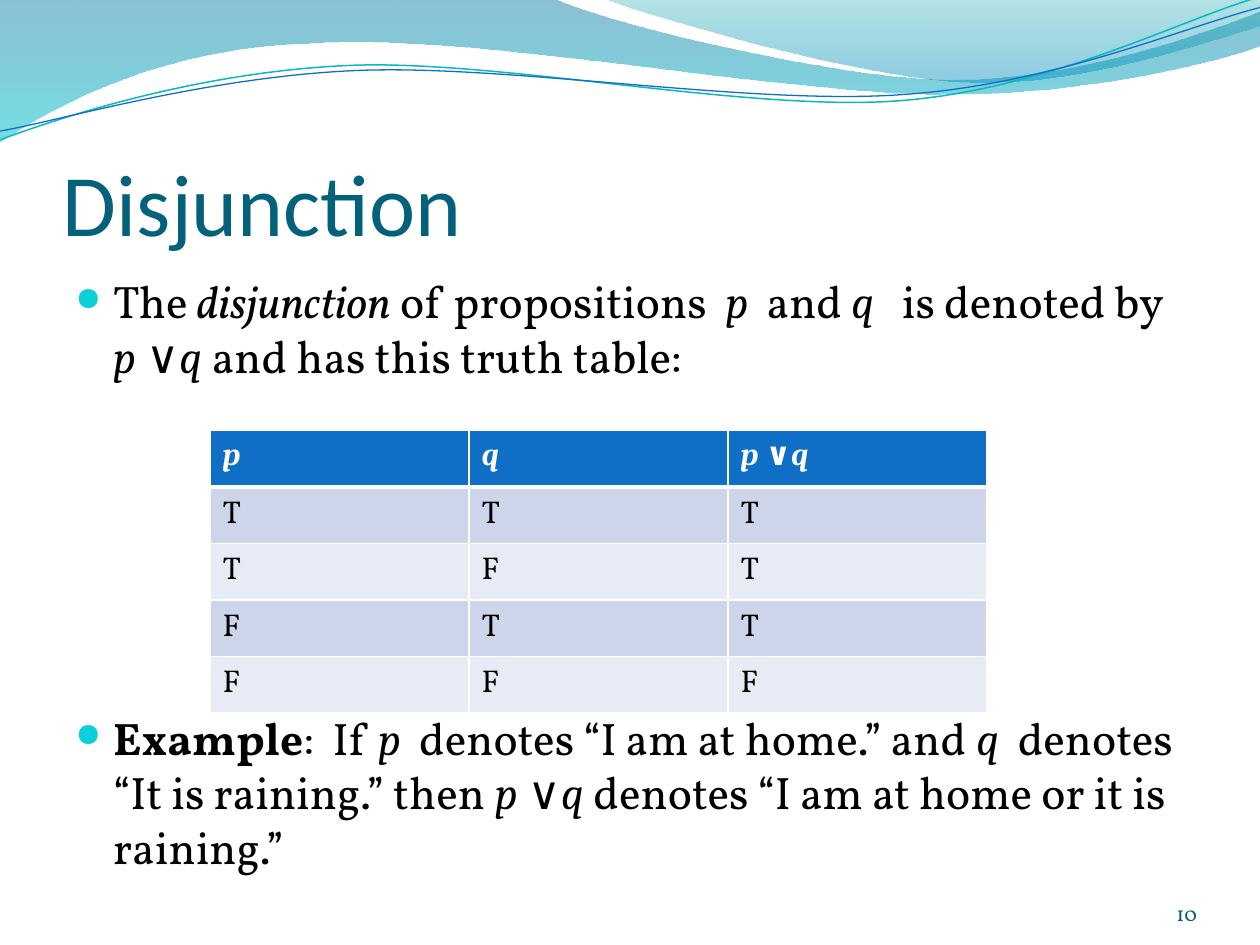
import math
import pptx
import pptx.dml.color
import pptx.enum.text
import pptx.oxml
import pptx.oxml.ns
import pptx.util

Pt = pptx.util.Pt
Enum = pptx.enum.text
qn = pptx.oxml.ns.qn
NS = 'xmlns:a="http://schemas.openxmlformats.org/drawingml/2006/main"'
HEX = {
    "deep": "0074A1", "aqua": "00C6CF", "teal": "00A1A9", "sea": "008BBF",
    "line": "0AB8BF", "blue": "0F6FC6", "title": "04617B", "page": "045D75",
    "dot": "0BD0D9", "band": "CCD5EA", "pale": "E7EBF5",
    "black": "000000", "white": "FFFFFF",
}
RGB = {name: pptx.dml.color.RGBColor.from_string(code) for name, code in HEX.items()}

deck = pptx.Presentation()
deck.slide_width, deck.slide_height = Pt(720), Pt(540)
slide = deck.slides.add_slide(deck.slide_layouts[6])
shapes = slide.shapes


def trace(start, parts, closed):
    """Draw an outline; a part of one point is a line, of three a Bezier curve."""
    ends = [start] + [part[-1] for part in parts]
    left, top = (Pt(min(values)) for values in zip(*ends))
    pen = shapes.build_freeform(Pt(start[0]), Pt(start[1]))
    pen.add_line_segments([(Pt(x), Pt(y)) for x, y in ends[1:]], close=closed)
    shape = pen.convert_to_shape()
    shape.shadow.inherit = False
    for node, part in zip(list(shape.element.iter(qn("a:lnTo"))), parts):
        if len(part) == 3:
            dots = "".join(f'<a:pt x="{Pt(x) - left}" y="{Pt(y) - top}"/>' for x, y in part)
            bend = pptx.oxml.parse_xml(f"<a:cubicBezTo {NS}>{dots}</a:cubicBezTo>")
            node.getparent().replace(node, bend)
    return shape


def write(para, runs, size, color, bold=False):
    """Add (text, style) runs: b bold, i italic, c Cambria, t Calibri."""
    for text, style in runs:
        run = para.add_run()
        run.text = text
        font = run.font
        font.size, font.color.rgb = Pt(size), RGB[color]
        font.name = "Cambria" if "c" in style else "Calibri" if "t" in style else "Vollkorn"
        font.bold, font.italic = bold or "b" in style, "i" in style


# Waves along the top
waves = [
    ((0, 0), [[(316.8, -0.7)],
              [(342.7, 12.2), (478.1, 45.4), (545.8, 45.4)],
              [(614.2, 45.4), (689.8, 18.7), (720, 6.5)],
              [(720.7, 25.9)],
              [(707.8, 31.7), (626.4, 54.7), (537.1, 54)],
              [(447.8, 54), (275, 20.2), (185, 24.5)],
              [(92.9, 25.9), (33.1, 59.8), (-0.7, 81.4)]],
     [("deep", 45), ("aqua", 55)]),
    ((344.9, -0.7), [[(366.5, 7.9), (491, 44.6), (553.7, 46.8)],
                     [(616.3, 49.7), (691.9, 23), (720, 15.1)],
                     [(720, 0)]],
     [("teal", 30), ("sea", 45)]),
]
for start, parts, stops in waves:
    wave = trace(start, parts, True)
    wave.line.fill.background()
    wave.fill.gradient()
    wave.fill.gradient_angle = 270
    for stop, (color, alpha) in zip(wave.fill.gradient_stops, stops):
        stop.color.rgb = RGB[color]
    for node, (color, alpha) in zip(wave.element.iter(qn("a:srgbClr")), stops):
        node.append(pptx.oxml.parse_xml(f'<a:alpha {NS} val="{alpha * 1000}"/>'))

# Thin curves: laid out level, then turned about their middle
tilt = 2.7
cos, sin = math.cos(math.radians(tilt)), math.sin(math.radians(tilt))
curves = [
    ((0, 79.9), [[(34.6, 67), (113.8, 41), (199.4, 37.4)],
                 [(284.4, 33.8), (427, 64.1), (513.4, 57.6)],
                 [(599.8, 51.1), (675.4, 10.8), (718.6, -1.4)]], (359.3, 41.4), "line", 0.85),
    ((0, 74.9), [[(33.8, 69.1), (118.1, 43.9), (203.8, 40.3)],
                 [(290.2, 36.7), (429.8, 60.5), (516.2, 54)],
                 [(601.9, 48.2), (677.5, 15.1), (720, 4.3)]], (359.6, 42.5), "blue", 0.75),
]
for start, parts, (midx, midy), color, width in curves:
    level = [[(midx + (x - midx) * cos - (y - midy) * sin,
               midy + (x - midx) * sin + (y - midy) * cos) for x, y in part]
             for part in [[start]] + parts]
    curve = trace(level[0][0], level[1:], False)
    curve.rotation = -tilt
    curve.fill.background()
    curve.line.color.rgb, curve.line.width = RGB[color], Pt(width)

# Title, body and page number
frames = []
for left, top, width, height, pads, anchor in [
    (36, 55.4, 648, 90, (0, 3.6, 0, 0), Enum.MSO_ANCHOR.BOTTOM),
    (36, 152.6, 648, 369.4, (7.2, 3.6, 7.2, 3.6), Enum.MSO_ANCHOR.TOP),
    (624, 500.4, 60, 28.8, (0, 0, 0, 0), Enum.MSO_ANCHOR.BOTTOM),
]:
    frame = shapes.add_textbox(Pt(left), Pt(top), Pt(width), Pt(height)).text_frame
    frame.word_wrap, frame.vertical_anchor = True, anchor
    (frame.margin_left, frame.margin_top,
     frame.margin_right, frame.margin_bottom) = map(Pt, pads)
    frames.append(frame)
title, body, page = frames

write(title.paragraphs[0], [("Disjunction", "t")], 50, "title")
page.paragraphs[0].alignment = Enum.PP_ALIGN.RIGHT
write(page.paragraphs[0], [("10", "")], 12, "page")

formula = [("p ", "ci"), ("∨", "c"), ("q", "ci")]
define = [("The ", ""), ("disjunction", "i"), (" of propositions  ", ""), ("p", "ci"),
          ("  and ", ""), ("q", "ci"), ("   is denoted by  ", ""), *formula,
          (" and has this truth table:", "")]
sample = [("Example", "b"), (":  If ", ""), ("p", "ci"),
          ("  denotes “I am at home.” and ", ""), ("q", "ci"),
          ("  denotes “It is raining.” then ", ""), *formula,
          (" denotes “I am at home or it is raining.”", "")]
# The wide space before the example leaves room for the table
for para, runs, space in [(body.paragraphs[0], define, 5.2),
                          (body.add_paragraph(), sample, 187)]:
    para.space_before = Pt(space)
    props = para._p.get_or_add_pPr()
    props.set("marL", str(Pt(21.6)))
    props.set("indent", str(-Pt(21.6)))
    for xml in (f'<a:buClr {NS}><a:srgbClr val="{HEX["dot"]}"/></a:buClr>',
                f'<a:buSzPct {NS} val="72000"/>',
                f'<a:buChar {NS} char="●"/>'):
        props.append(pptx.oxml.parse_xml(xml))
    write(para, runs, 26, "black")

# Truth table
heads = [[("p", "ci")], [("q", "ci")], formula]
rows = [heads] + [[[(mark, "")] for mark in line] for line in ("TTT", "TFT", "FTT", "FFF")]
wide, high = 148, 32.3
table = shapes.add_table(len(rows), 3, Pt(120), Pt(246),
                         Pt(3 * wide), Pt(len(rows) * high)).table
table.first_row = table.horz_banding = False
for col in table.columns:
    col.width = Pt(wide)
for r, row in enumerate(rows):
    table.rows[r].height = Pt(high)
    for c, runs in enumerate(row):
        cell = table.cell(r, c)
        props = cell._tc.get_or_add_tcPr()
        for side in "LRTB":
            thick = 3 if (r, side) in ((0, "B"), (1, "T")) else 1
            props.append(pptx.oxml.parse_xml(
                f'<a:ln{side} {NS} w="{Pt(thick)}"><a:solidFill>'
                f'<a:srgbClr val="{HEX["white"]}"/></a:solidFill></a:ln{side}>'))
        cell.fill.solid()
        cell.fill.fore_color.rgb = RGB["blue" if r == 0 else "band" if r % 2 else "pale"]
        write(cell.text_frame.paragraphs[0], runs, 18,
              "black" if r else "white", bold=r == 0)

deck.save("out.pptx")
